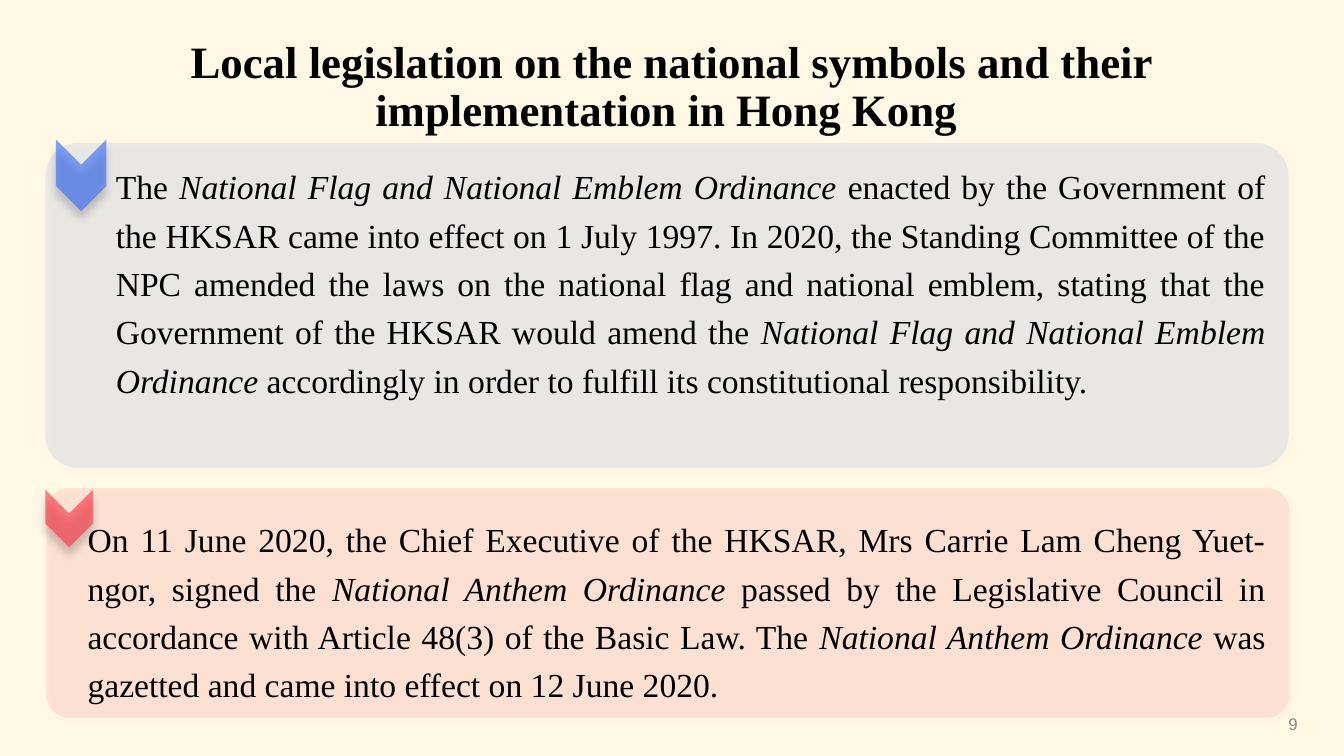
from lxml import etree
from pptx import Presentation
from pptx.dml.color import RGBColor
from pptx.enum.shapes import MSO_SHAPE as Shape
from pptx.enum.text import MSO_ANCHOR as Anchor, PP_ALIGN as Align
from pptx.oxml.ns import qn
from pptx.util import Inches, Pt

SERIF = "Times New Roman"


def paint(shape, color, alpha, shadow):
    """Give a shape a translucent fill, no line and a soft outer shadow."""
    shape.fill.solid()
    shape.fill.fore_color.rgb = RGBColor.from_string(color)
    shape.line.fill.background()
    shape.shadow.inherit = False
    properties = shape._element.spPr
    tint = properties.find(qn("a:solidFill"))[0]
    etree.SubElement(tint, qn("a:alpha"), val=str(alpha * 1000))
    opacity, blur, distance, angle = shadow
    outer = etree.SubElement(
        properties.find(qn("a:effectLst")), qn("a:outerShdw"),
        blurRad=str(Pt(blur)), dist=str(Pt(distance)),
        dir=str(angle * 60000), algn="ctr", rotWithShape="0")
    black = etree.SubElement(outer, qn("a:srgbClr"), val="000000")
    etree.SubElement(black, qn("a:alpha"), val=str(opacity * 1000))


def add_run(para, text, size, font=SERIF, color="000000", bold=False, italic=False):
    run = para.add_run()
    run.text = text
    run.font.name = font
    run.font.size = Pt(size)
    run.font.bold = bold
    run.font.italic = italic
    run.font.color.rgb = RGBColor.from_string(color)


deck = Presentation()
deck.slide_width, deck.slide_height = Inches(13.33), Inches(7.5)
page = deck.slides.add_slide(deck.slide_layouts[5])

# Cream background
page.background.fill.solid()
page.background.fill.fore_color.rgb = RGBColor.from_string("FFF8E5")

# Title
title = page.shapes.title
title.left, title.top = Inches(0.66), Inches(0.34)
title.width, title.height = Inches(12.01), Inches(0.66)
title.text_frame.vertical_anchor = Anchor.TOP
title.text_frame.word_wrap = True
para = title.text_frame.paragraphs[0]
para.alignment = Align.CENTER
para.line_spacing = 0.9
add_run(para, "Local legislation on the national symbols and their "
        "implementation in Hong Kong ", 32, bold=True)

# Two ordinances: colour, panel, text box, chevron, then (text, italic) runs
ordinances = [
    ("386DFC", (0.45, 1.42, 12.33, 3.22), (1.05, 1.52, 11.6, 2.12),
     (0.45, 1.49, 0.71, 0.5), [
        ("The ", False),
        ("National Flag and National Emblem Ordinance ", True),
        ("enacted by the Government of the HKSAR came into effect on 1 July 1997. "
         "In 2020, the Standing Committee of the NPC amended the laws on the national "
         "flag and national emblem, stating that the Government of the HKSAR would "
         "amend the ", False),
        ("National Flag and National Emblem Ordinance ", True),
        ("accordingly in order to fulfill its constitutional responsibility.", False)]),
    ("FF3447", (0.46, 4.84, 12.33, 2.28), (0.77, 5.02, 11.88, 2.09),
     (0.4, 4.91, 0.57, 0.47), [
        ("On 11 June 2020, the Chief Executive of the HKSAR, Mrs Carrie Lam Cheng "
         "Yuet-ngor, signed the ", False),
        ("National Anthem Ordinance ", True),
        ("passed by the Legislative Council in accordance with Article 48(3) of the "
         "Basic Law. The ", False),
        ("National Anthem Ordinance ", True),
        ("was gazetted and came into effect on 12 June 2020.", False)]),
]
for color, panel_at, text_at, chevron_at, runs in ordinances:
    panel = page.shapes.add_shape(Shape.ROUNDED_RECTANGLE, *map(Inches, panel_at))
    panel.adjustments[0] = 0.1
    paint(panel, color, 10, (13, 4, 3, 45))

    box = page.shapes.add_textbox(*map(Inches, text_at))
    box.text_frame.word_wrap = True
    para = box.text_frame.paragraphs[0]
    para.alignment = Align.JUSTIFY
    para.line_spacing = 1.2
    for text, italic in runs:
        add_run(para, text, 24, italic=italic)

    chevron = page.shapes.add_shape(Shape.CHEVRON, *map(Inches, chevron_at))
    chevron.rotation = 90
    paint(chevron, color, 62, (30, 6, 6, 90))

# Page number
number = page.shapes.add_textbox(Inches(9.97), Inches(6.98), Inches(3), Inches(0.4))
number.text_frame.vertical_anchor = Anchor.MIDDLE
number.text_frame.word_wrap = True
para = number.text_frame.paragraphs[0]
para.alignment = Align.RIGHT
add_run(para, "9", 12, font="Arial", color="898989")

deck.save("out.pptx")
